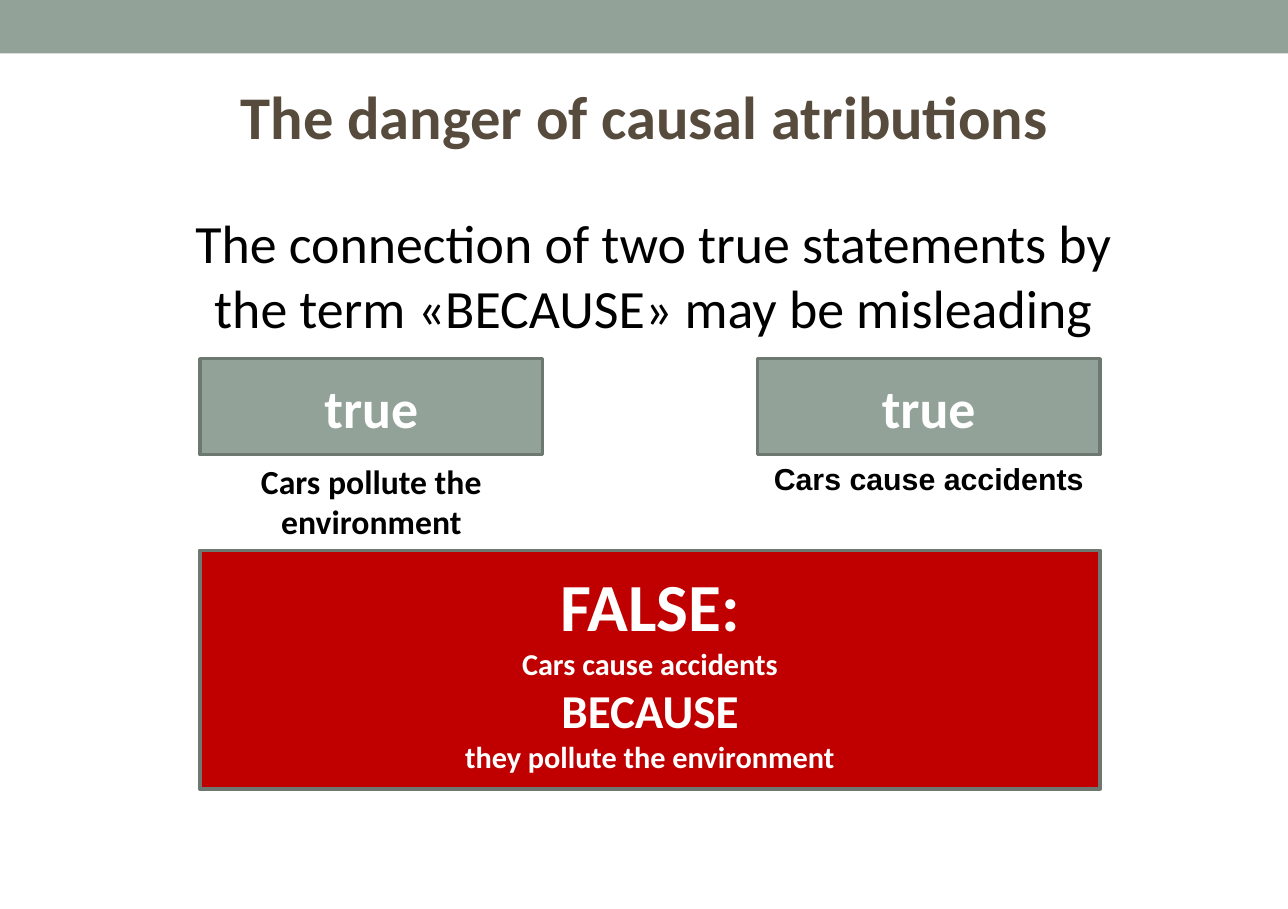
from dataclasses import dataclass

from pptx import Presentation
from pptx.dml.color import RGBColor
from pptx.enum.shapes import MSO_SHAPE
from pptx.enum.text import MSO_ANCHOR, PP_ALIGN
from pptx.util import Inches, Pt


@dataclass(frozen=True)
class Theme:
    sage: RGBColor = RGBColor(0x93, 0xA2, 0x99)
    outline: RGBColor = RGBColor(0x6D, 0x78, 0x71)
    brown: RGBColor = RGBColor(0x56, 0x4B, 0x3C)
    red: RGBColor = RGBColor(0xC0, 0x00, 0x00)
    white: RGBColor = RGBColor(0xFF, 0xFF, 0xFF)
    black: RGBColor = RGBColor(0x00, 0x00, 0x00)
    font: str = "Calibri"
    plain_font: str = "Arial"
    title: int = 36
    body: int = 32
    verdict: int = 40
    link: int = 28
    claim: int = 20
    small: int = 18


theme = Theme()


def write(box, text, sizes, color, bold=True, font=theme.font, anchor=MSO_ANCHOR.MIDDLE):
    frame = box.text_frame
    frame.text = text
    frame.word_wrap = True
    frame.vertical_anchor = anchor
    for para, size in zip(frame.paragraphs, sizes):
        para.alignment = PP_ALIGN.CENTER
        for span in para.runs:
            span.font.name = font
            span.font.size = Pt(size)
            span.font.bold = bold
            span.font.color.rgb = color


def add_panel(left, top, width, height, fill, line=None):
    panel = page.shapes.add_shape(
        MSO_SHAPE.RECTANGLE, Inches(left), Inches(top), Inches(width), Inches(height))
    panel.shadow.inherit = False
    panel.fill.solid()
    panel.fill.fore_color.rgb = fill
    if line is None:
        panel.line.fill.background()
    else:
        panel.line.color.rgb = line
        panel.line.width = Pt(2)
    return panel


deck = Presentation()
deck.slide_width = Inches(10.63)
deck.slide_height = Inches(7.5)
page = deck.slides.add_slide(deck.slide_layouts[5])

add_panel(0, 0, 10.63, 0.44, theme.sage)

title = page.shapes.title
title.left, title.top = Inches(0.8), Inches(0.44)
title.width, title.height = Inches(9.04), Inches(1.02)
write(title, "The danger of causal atributions", [theme.title], theme.brown)

message = page.shapes.add_textbox(Inches(1.23), Inches(1.68), Inches(8.33), Inches(1.08))
write(message, "The connection of two true statements by the term «BECAUSE» may be misleading",
      [theme.body], theme.black, bold=False, anchor=MSO_ANCHOR.TOP)

statements = [
    (1.65, "Cars pollute the environment", theme.claim, theme.font, 0.77),
    (6.25, "Cars cause accidents", theme.small, theme.plain_font, 0.4),
]
for left, claim, size, font, height in statements:
    label = add_panel(left, 2.96, 2.83, 0.79, theme.sage, theme.outline)
    write(label, "true", [theme.body], theme.white)
    caption = page.shapes.add_textbox(Inches(left), Inches(3.75), Inches(2.83), Inches(height))
    write(caption, claim, [size], theme.black, font=font, anchor=MSO_ANCHOR.TOP)

conclusion = add_panel(1.65, 4.54, 7.43, 1.97, theme.red, theme.outline)
write(conclusion, "FALSE:\nCars cause accidents\nBECAUSE\nthey pollute the environment",
      [theme.verdict, theme.small, theme.link, theme.small], theme.white)

deck.save("out.pptx")
